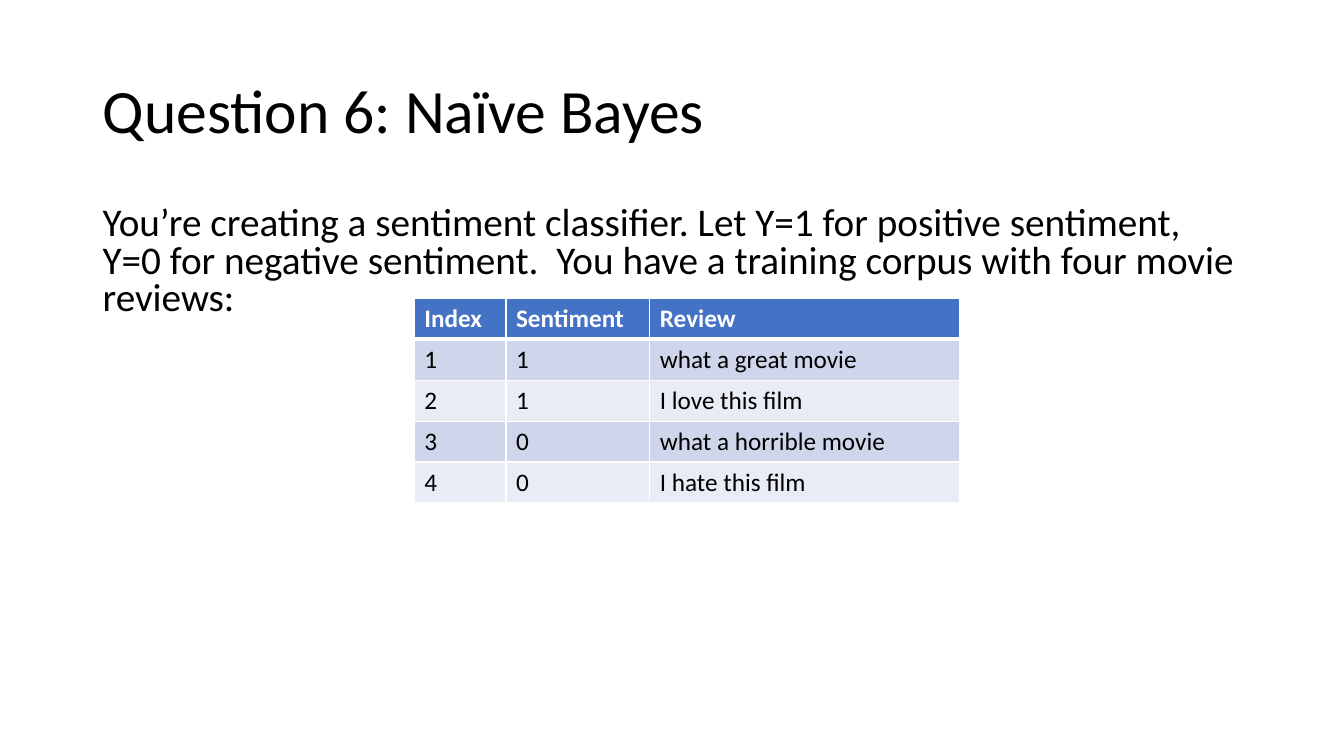
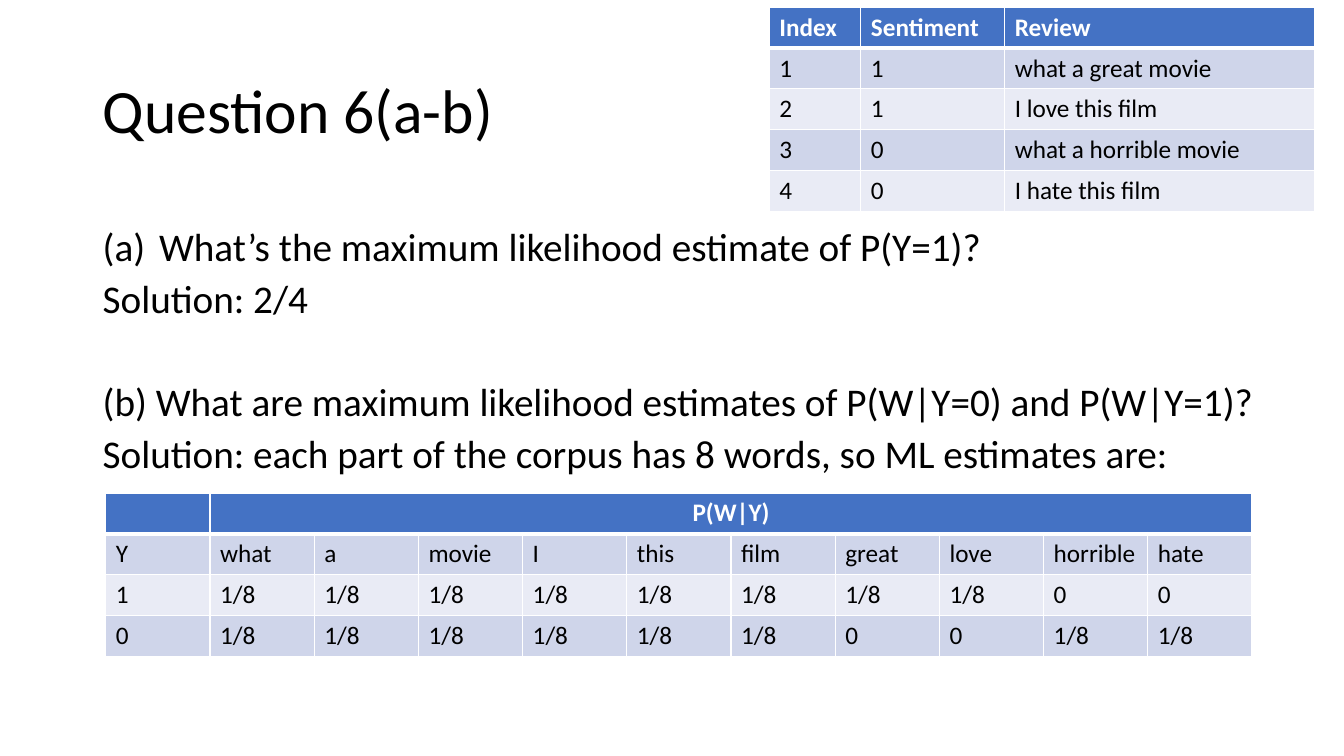
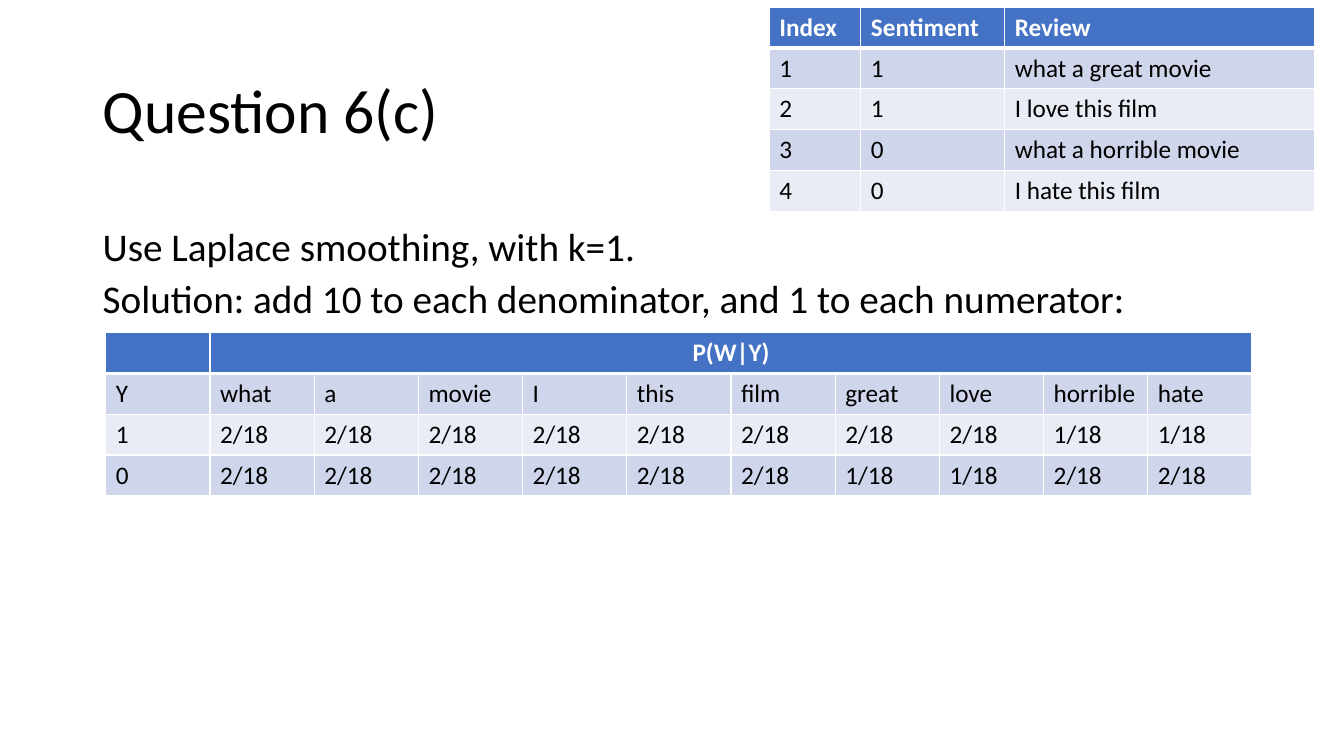
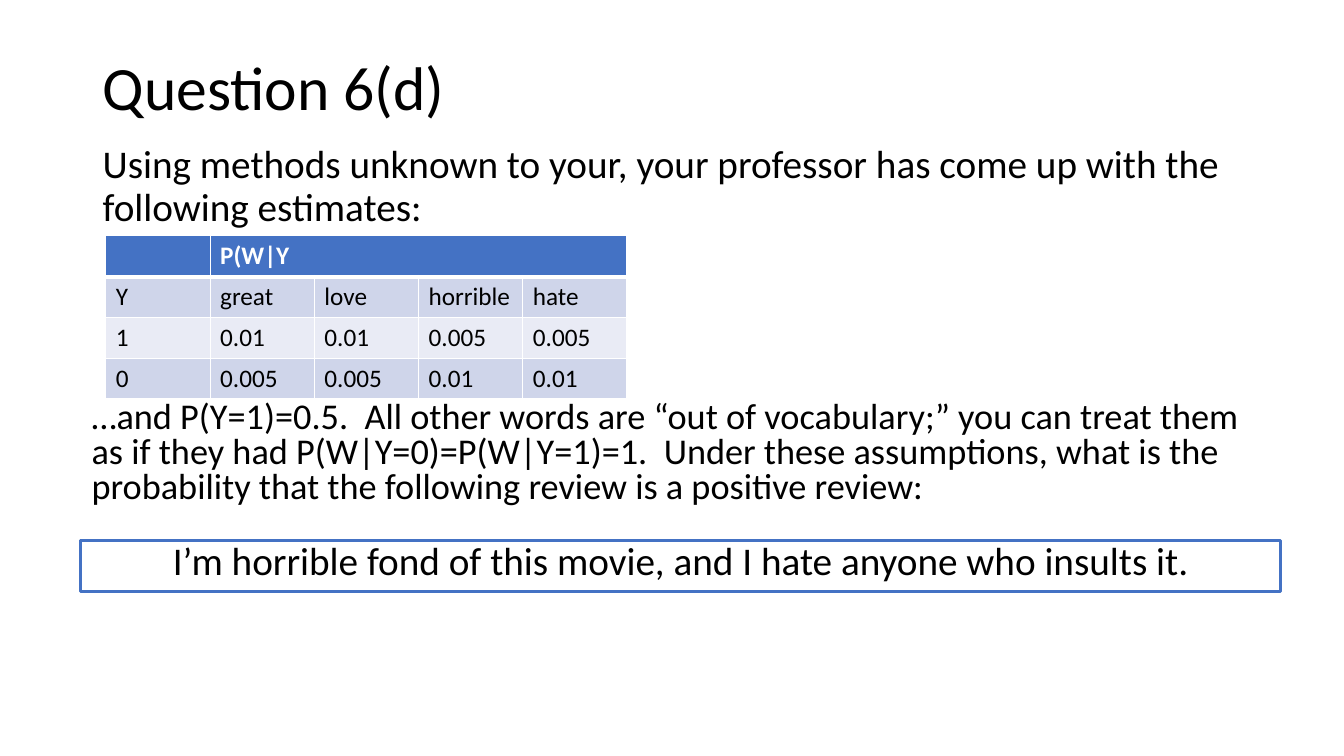
import pptx
import pptx.dml.color
import pptx.enum.shapes
import pptx.enum.text
import pptx.oxml
import pptx.oxml.ns
import pptx.util

COLORS = {
    "text": "000000",
    "white": "FFFFFF",
    "accent": "4472C4",
    "odd": "CFD5EA",
    "even": "E9EBF5",
}
FONT = "Calibri"
TITLE_SIZE, BODY_SIZE, CELL_SIZE = 44, 28, 18
EMU_PER_PX = 9144

REVIEWS = [
    ["Index", "Sentiment", "Review"],
    ["1", "1", "what a great movie"],
    ["2", "1", "I love this film"],
    ["3", "0", "what a horrible movie"],
    ["4", "0", "I hate this film"],
]
REVIEW_COLUMNS = [91, 143, 308]
SHARED_WORDS = ["what", "a", "movie", "I", "this", "film"]
OPINION_WORDS = ["great", "love", "horrible", "hate"]
CENTER = pptx.enum.text.PP_ALIGN.CENTER


def px(n):
    return pptx.util.Emu(n * EMU_PER_PX)


def color(name):
    return pptx.dml.color.RGBColor.from_string(COLORS[name])


def likelihood_rows(words, high, low, shared=0):
    """Rows of P(W|Y): shared words score high for both values of Y."""
    common = [high] * shared
    return [
        ["", "P(W|Y)"],
        ["Y"] + words,
        ["1"] + common + [high, high, low, low],
        ["0"] + common + [low, low, high, high],
    ]


class Deck:
    def __init__(self):
        self.prs = pptx.Presentation()
        self.prs.slide_width, self.prs.slide_height = px(1333), px(750)
        self.s = None

    def slide(self, title, width=507, height=145):
        self.s = self.prs.slides.add_slide(self.prs.slide_layouts[6])
        tf = self.text([title], 92, 40, width, height, TITLE_SIZE, spacing=0.9)
        tf.vertical_anchor = pptx.enum.text.MSO_ANCHOR.MIDDLE

    def format(self, p, size, name="text", bold=False):
        for r in p.runs:
            r.font.name = FONT
            r.font.size = pptx.util.Pt(size)
            r.font.bold = bold
            r.font.color.rgb = color(name)

    def fill_frame(self, tf, lines, size, spacing, align=None):
        tf.word_wrap = True
        tf.text = "\n".join(lines)
        for i, p in enumerate(tf.paragraphs):
            p.line_spacing = spacing
            p.alignment = align
            if i:
                p.space_before = pptx.util.Pt(10)
            self.format(p, size)

    def text(self, lines, x, y, w, h, size=BODY_SIZE, spacing=0.8):
        tf = self.s.shapes.add_textbox(px(x), px(y), px(w), px(h)).text_frame
        self.fill_frame(tf, lines, size, spacing)
        return tf

    def letter(self, p, indent):
        """Number the paragraph as (a), with a hanging indent."""
        pPr = p._p.get_or_add_pPr()
        pPr.set("marL", str(px(indent)))
        pPr.set("indent", str(px(-indent)))
        bullet = pptx.oxml.parse_xml(
            f'<a:buAutoNum {pptx.oxml.ns.nsdecls("a")} type="alphaLcParenBoth"/>')
        pPr.append(bullet)

    def outlined_box(self, line, x, y, w, h):
        sp = self.s.shapes.add_shape(
            pptx.enum.shapes.MSO_SHAPE.RECTANGLE, px(x), px(y), px(w), px(h))
        sp.shadow.inherit = False
        sp.fill.background()
        sp.line.color.rgb = color("accent")
        sp.line.width = pptx.util.Pt(2)
        tf = sp.text_frame
        tf.vertical_anchor = pptx.enum.text.MSO_ANCHOR.TOP
        self.fill_frame(tf, [line], BODY_SIZE, 0.8, CENTER)

    def borders(self, cell, row):
        """White rules, thicker between the header and the body."""
        tcPr = cell._tc.get_or_add_tcPr()
        widths = {"L": 1, "R": 1, "T": 3 if row == 1 else 1, "B": 3 if row == 0 else 1}
        for side, width in widths.items():
            tcPr.append(pptx.oxml.parse_xml(
                f'<a:ln{side} {pptx.oxml.ns.nsdecls("a")} w="{pptx.util.Pt(width)}">'
                f'<a:solidFill><a:srgbClr val="{COLORS["white"]}"/></a:solidFill>'
                f'</a:ln{side}>'))

    def table(self, rows, x, y, w, h, columns):
        """Columns are relative widths; a short header spans the rest of its row."""
        table = self.s.shapes.add_table(
            len(rows), len(columns), px(x), px(y), px(w), px(h)).table
        table.horz_banding = False
        for column, share in zip(table.columns, columns):
            column.width = px(w) * share // sum(columns)
        for i, values in enumerate(rows):
            table.rows[i].height = px(h) // len(rows)
            fill = "accent" if i == 0 else "odd" if i % 2 else "even"
            for j in range(len(columns)):
                cell = table.cell(i, j)
                self.borders(cell, i)
                cell.fill.solid()
                cell.fill.fore_color.rgb = color(fill)
                if j < len(values):
                    cell.text = values[j]
                    self.format(cell.text_frame.paragraphs[0], CELL_SIZE,
                                "text" if i else "white", bold=i == 0)
        if len(rows[0]) < len(columns):
            table.cell(0, len(rows[0]) - 1).merge(table.cell(0, len(columns) - 1))
        return table

    def reviews(self, x, y):
        self.table(REVIEWS, x, y, 541, 203, REVIEW_COLUMNS)

    def likelihoods(self, rows, y, w):
        return self.table(rows, 105, y, w, 162, [1] * len(rows[1]))

    def full_likelihoods(self, high, low, y):
        rows = likelihood_rows(SHARED_WORDS + OPINION_WORDS, high, low, len(SHARED_WORDS))
        table = self.likelihoods(rows, y, 1137)
        table.cell(0, 1).text_frame.paragraphs[0].alignment = CENTER


def main():
    deck = Deck()

    deck.slide("Question 6: Naïve Bayes", width=1150)
    deck.text(["You’re creating a sentiment classifier. Let Y=1 for positive sentiment, "
               "Y=0 for negative sentiment.  You have a training corpus with four "
               "movie reviews:"], 92, 200, 1150, 126)
    deck.reviews(411, 296)

    deck.slide("Question 6(a-b)")
    tf = deck.text([
        "What’s the maximum likelihood estimate of P(Y=1)?",
        "Solution: 2/4",
        "(b) What are maximum likelihood estimates of P(W|Y=0) and P(W|Y=1)?",
        "Solution: each part of the corpus has 8 words, so ML estimates are:",
    ], 92, 225, 1190, 274)
    deck.letter(tf.paragraphs[0], 56)
    tf.paragraphs[2].space_before = pptx.util.Pt(47)
    deck.reviews(763, 7)
    deck.full_likelihoods("1/8", "0", 489)

    deck.slide("Question 6(c)")
    deck.text(["Use Laplace smoothing, with k=1.",
               "Solution: add 10 to each denominator, and 1 to each numerator:"],
              92, 225, 1190, 107)
    deck.reviews(763, 7)
    deck.full_likelihoods("2/18", "1/18", 330)

    deck.slide("Question 6(d)", height=99)
    deck.text(["Using methods unknown to your, your professor has come up with the "
               "following estimates:"], 92, 139, 1190, 95, spacing=0.9)
    rows = likelihood_rows(OPINION_WORDS, "0.01", "0.005")
    rows[0][1] = "P(W|Y"
    deck.likelihoods(rows, 234, 517)
    deck.text(["…and P(Y=1)=0.5.  All other words are “out of vocabulary;” you can treat "
               "them as if they had P(W|Y=0)=P(W|Y=1)=1.  Under these assumptions, what is "
               "the probability that the following review is a positive review:"],
              81, 394, 1190, 120, size=25.9)
    deck.outlined_box("I’m horrible fond of this movie, and I hate anyone who insults it.",
                      80, 536, 1190, 51)

    deck.prs.save("out.pptx")


if __name__ == "__main__":
    main()
